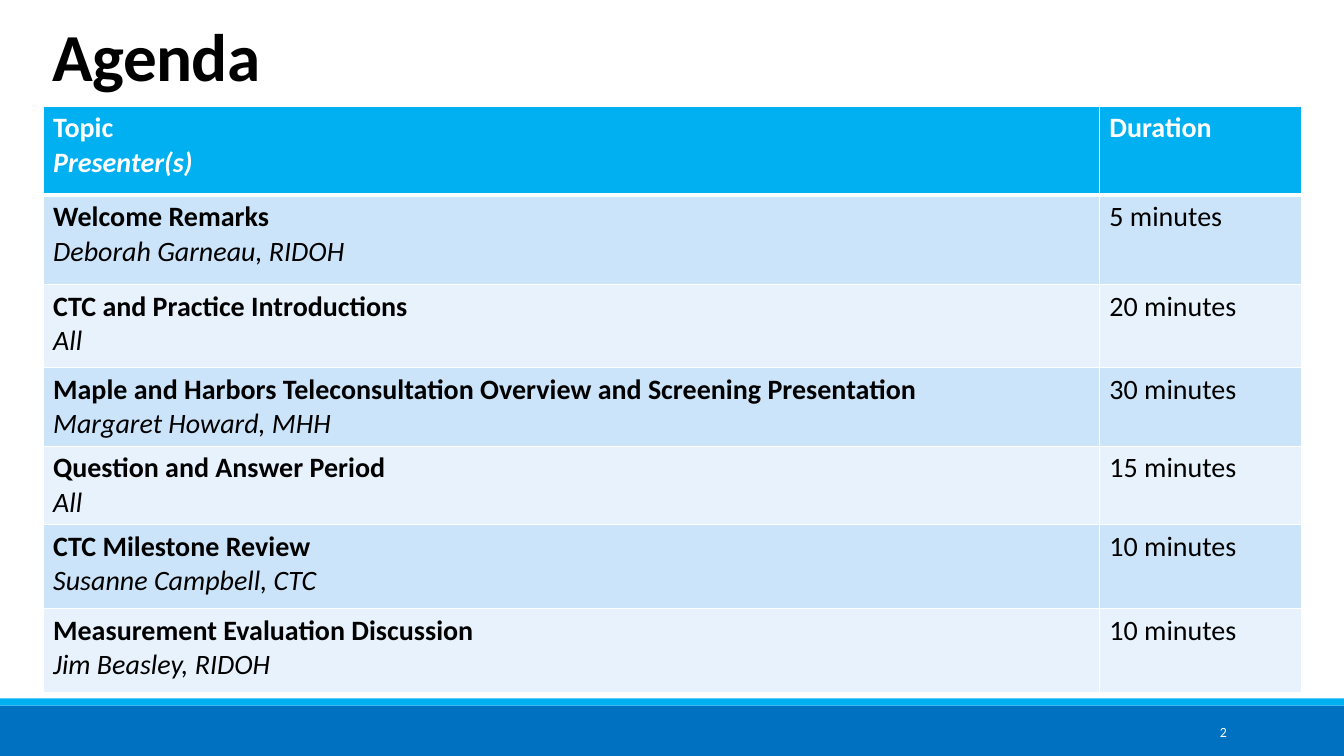
from dataclasses import dataclass
from typing import Any

from lxml.etree import SubElement
from pptx import Presentation
from pptx.dml.color import RGBColor
from pptx.enum.shapes import MSO_SHAPE
from pptx.enum.text import MSO_ANCHOR, PP_ALIGN
from pptx.oxml.ns import qn
from pptx.util import Emu, Pt

EMU_PER_PX = 9525


@dataclass(frozen=True)
class Theme:
    font: str = "Calibri"
    white: str = "FFFFFF"
    black: str = "000000"
    accent: str = "00B0F0"
    footer: str = "0070C0"
    bands: tuple[str, str] = ("CCE4F9", "E7F2FC")
    title_size: int = 48
    table_size: int = 20
    number_size: int = 10
    border: int = 1
    header_border: int = 3


@dataclass(frozen=True)
class Box:
    left: int
    top: int
    width: int
    height: int

    def emu(self) -> tuple[Emu, Emu, Emu, Emu]:
        return px(self.left), px(self.top), px(self.width), px(self.height)


@dataclass(frozen=True)
class Bar:
    box: Box
    color: str


@dataclass(frozen=True)
class Label:
    box: Box
    text: str
    size: int
    color: str
    anchor: MSO_ANCHOR
    paragraph_format: dict[str, Any]
    bold: bool = False
    spacing: int = 0


@dataclass(frozen=True)
class AgendaRow:
    topic: str
    presenter: str
    duration: str
    height: int


THEME = Theme()
SLIDE_WIDTH, SLIDE_HEIGHT = 1280, 720
COLUMN_WIDTHS = (1006, 193)
TABLE_LEFT, TABLE_TOP = 41, 101

BARS = (
    Bar(Box(0, 672, SLIDE_WIDTH, 48), THEME.footer),
    Bar(Box(0, 665, SLIDE_WIDTH, 7), THEME.accent),
)
LABELS = (
    Label(Box(41, 17, 1056, 78), "Agenda", THEME.title_size, THEME.black,
          MSO_ANCHOR.BOTTOM, {"line_spacing": 0.85}, bold=True, spacing=-50),
    Label(Box(1040, 678, 138, 38), "2", THEME.number_size, THEME.white,
          MSO_ANCHOR.MIDDLE, {"alignment": PP_ALIGN.RIGHT}),
)
AGENDA = (
    AgendaRow("Topic", "Presenter(s)", "Duration", 85),
    AgendaRow("Welcome Remarks", "Deborah Garneau, RIDOH", "5 minutes", 85),
    AgendaRow("CTC and Practice Introductions", "All", "20 minutes", 79),
    AgendaRow("Maple and Harbors Teleconsultation Overview and Screening Presentation",
              "Margaret Howard, MHH", "30 minutes", 75),
    AgendaRow("Question and Answer Period", "All", "15 minutes", 75),
    AgendaRow("CTC Milestone Review", "Susanne Campbell, CTC", "10 minutes", 80),
    AgendaRow("Measurement Evaluation Discussion", "Jim Beasley, RIDOH", "10 minutes", 80),
)


def px(length: int) -> Emu:
    return Emu(length * EMU_PER_PX)


def apply_format(target: Any, values: dict[str, Any]) -> None:
    for name, value in values.items():
        setattr(target, name, value)


def add_run(paragraph: Any, text: str, size: int, color: str,
            bold: bool = False, italic: bool = False) -> Any:
    run = paragraph.add_run()
    run.text = text
    apply_format(run.font, {"name": THEME.font, "size": Pt(size), "bold": bold, "italic": italic})
    run.font.color.rgb = RGBColor.from_string(color)
    return run


def draw_bar(slide: Any, bar: Bar) -> None:
    shape = slide.shapes.add_shape(MSO_SHAPE.RECTANGLE, *bar.box.emu())
    shape.shadow.inherit = False
    shape.fill.solid()
    shape.fill.fore_color.rgb = RGBColor.from_string(bar.color)
    shape.line.fill.background()


def draw_label(slide: Any, label: Label) -> None:
    frame = slide.shapes.add_textbox(*label.box.emu()).text_frame
    apply_format(frame, {"word_wrap": True, "vertical_anchor": label.anchor})
    paragraph = frame.paragraphs[0]
    apply_format(paragraph, label.paragraph_format)
    run = add_run(paragraph, label.text, label.size, label.color, label.bold)
    if label.spacing:
        run.font._element.set("spc", str(label.spacing))


def add_borders(cell: Any, widths: dict[str, int]) -> None:
    properties = cell._tc.get_or_add_tcPr()
    for side, width in widths.items():
        line = SubElement(properties, qn(f"a:ln{side}"), w=str(Pt(width)))
        fill = SubElement(line, qn("a:solidFill"))
        SubElement(fill, qn("a:srgbClr"), val=THEME.white)


def draw_agenda(slide: Any) -> None:
    box = Box(TABLE_LEFT, TABLE_TOP, sum(COLUMN_WIDTHS), sum(row.height for row in AGENDA))
    table = slide.shapes.add_table(len(AGENDA), len(COLUMN_WIDTHS), *box.emu()).table
    for column, width in zip(table.columns, COLUMN_WIDTHS):
        column.width = px(width)
    for index, row in enumerate(AGENDA):
        table.rows[index].height = px(row.height)
        header = index == 0
        color = THEME.white if header else THEME.black
        background = THEME.accent if header else THEME.bands[(index - 1) % 2]
        top = THEME.header_border if index == 1 else THEME.border
        bottom = THEME.header_border if header else THEME.border
        topic_cell, duration_cell = table.rows[index].cells
        for cell in (topic_cell, duration_cell):
            add_borders(cell, {"L": THEME.border, "R": THEME.border, "T": top, "B": bottom})
            cell.fill.solid()
            cell.fill.fore_color.rgb = RGBColor.from_string(background)
        topic_frame = topic_cell.text_frame
        add_run(topic_frame.paragraphs[0], row.topic, THEME.table_size, color, bold=True)
        add_run(topic_frame.add_paragraph(), row.presenter, THEME.table_size, color,
                bold=header, italic=True)
        add_run(duration_cell.text_frame.paragraphs[0], row.duration, THEME.table_size, color,
                bold=header)


def main() -> None:
    presentation = Presentation()
    apply_format(presentation, {"slide_width": px(SLIDE_WIDTH), "slide_height": px(SLIDE_HEIGHT)})
    slide = presentation.slides.add_slide(presentation.slide_layouts[6])
    for bar in BARS:
        draw_bar(slide, bar)
    for label in LABELS:
        draw_label(slide, label)
    draw_agenda(slide)
    presentation.save("out.pptx")


if __name__ == "__main__":
    main()
